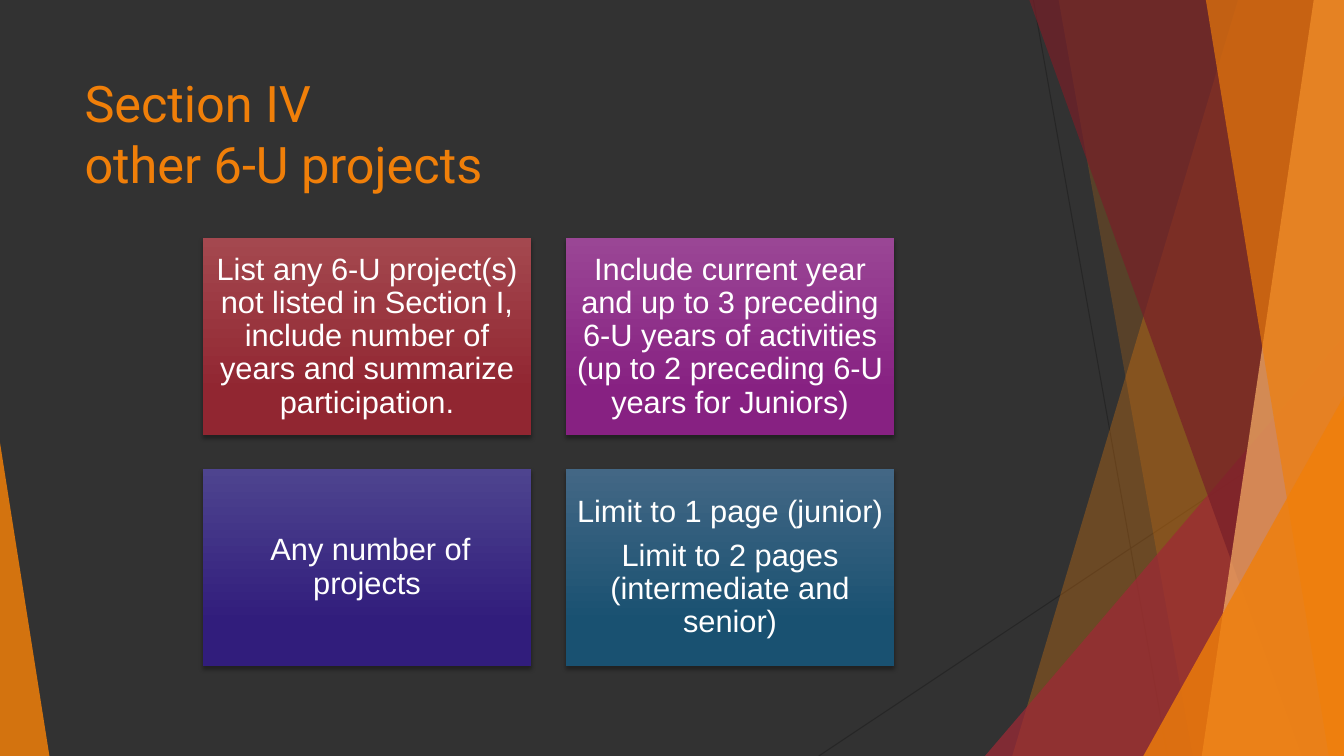
"""Build the Section IV slide: a title, four requirement cards and angled shards."""
from dataclasses import dataclass

from lxml import etree
from pptx import Presentation
from pptx.dml.color import RGBColor
from pptx.enum.shapes import MSO_CONNECTOR, MSO_SHAPE
from pptx.enum.text import MSO_ANCHOR, PP_ALIGN
from pptx.oxml.ns import qn
from pptx.shapes.autoshape import Shape
from pptx.slide import Slide
from pptx.util import Inches, Pt

STRAIGHT = MSO_CONNECTOR.STRAIGHT
TRIANGLE, RECTANGLE = MSO_SHAPE.ISOSCELES_TRIANGLE, MSO_SHAPE.RECTANGLE
TOP, MIDDLE, CENTER = MSO_ANCHOR.TOP, MSO_ANCHOR.MIDDLE, PP_ALIGN.CENTER

CHARCOAL = RGBColor(0x32, 0x32, 0x32)
SOOT = RGBColor(0x26, 0x26, 0x26)
ORANGE = RGBColor(0xF0, 0x7F, 0x09)
PEACH = RGBColor(0xF9, 0xB2, 0x68)
RED = RGBColor(0x9F, 0x29, 0x36)
MAROON = RGBColor(0x77, 0x1F, 0x28)
WHITE = RGBColor(0xFF, 0xFF, 0xFF)
CARD_RED = RGBColor(0xA4, 0x48, 0x4F), RGBColor(0x91, 0x26, 0x31)
CARD_PURPLE = RGBColor(0x9A, 0x46, 0x95), RGBColor(0x87, 0x21, 0x82)
CARD_INDIGO = RGBColor(0x4E, 0x44, 0x8F), RGBColor(0x31, 0x1D, 0x7C)
CARD_BLUE = RGBColor(0x43, 0x67, 0x85), RGBColor(0x19, 0x51, 0x71)

SLIDE_WIDTH, SLIDE_HEIGHT = Inches(13.33), Inches(7.5)
TITLE_BOX = 5.55, 8.93, 70.52, 19.2
CARD_LEFT, CARD_TOP = 15.08, 31.47
CARD_WIDTH, CARD_HEIGHT = 24.46, 26.13
COLUMN_STEP, ROW_STEP = 27.01, 30.53
CARD_INSET = Inches(0.09)


@dataclass(frozen=True)
class Ray:
    """A thin line between two points in percent of the slide."""
    start: tuple[float, float]
    end: tuple[float, float]


@dataclass(frozen=True)
class Shard:
    """A full-height panel from a slanted left edge to the slide's right edge."""
    top_x: float
    bottom_x: float
    color: RGBColor
    opacity: int


@dataclass(frozen=True)
class Wedge:
    """A right triangle standing on the slide's bottom edge."""
    left: float
    width: float
    height: float
    apex: float
    color: RGBColor
    opacity: int


@dataclass(frozen=True)
class Card:
    """A requirement placed by column and row, with its gradient colours."""
    column: int
    row: int
    gradient: tuple[RGBColor, RGBColor]
    lines: tuple[str, ...]


RAYS = (
    Ray((76.89, 0), (86.87, 100)),
    Ray((100, 53.73), (60.92, 100)),
)
BACKDROP = (
    Shard(92.12, 75.32, ORANGE, 30),
    Shard(78.77, 88.75, ORANGE, 20),
    Wedge(73.29, 26.71, 55.6, 1, RED, 72),
    Shard(76.59, 96.85, MAROON, 70),
    Shard(97.75, 89.42, PEACH, 70),
    Shard(89.72, 98.87, ORANGE, 65),
    Wedge(85.07, 14.93, 47.6, 1, ORANGE, 80),
    Wedge(0, 3.68, 41.47, 0, ORANGE, 85),
)
CARDS = (
    Card(0, 0, CARD_RED, ("List any 6-U project(s) not listed in Section I, include "
                          "number of years and summarize participation.",)),
    Card(1, 0, CARD_PURPLE, ("Include current year and up to 3 preceding 6-U years of "
                             "activities (up to 2 preceding 6-U years for Juniors)",)),
    Card(0, 1, CARD_INDIGO, (" Any number of projects",)),
    Card(1, 1, CARD_BLUE, ("Limit to 1 page (junior)",
                           "Limit to 2 pages (intermediate and senior)")),
)


def across(percent: float) -> int:
    """Turn a percentage of the slide's width into a length."""
    return round(SLIDE_WIDTH * percent / 100)


def down(percent: float) -> int:
    """Turn a percentage of the slide's height into a length."""
    return round(SLIDE_HEIGHT * percent / 100)


def draw_ray(slide: Slide, ray: Ray) -> None:
    """Draw one thin background line."""
    (x1, y1), (x2, y2) = ray.start, ray.end
    line = slide.shapes.add_connector(STRAIGHT, across(x1), down(y1), across(x2), down(y2))
    line.line.color.rgb = SOOT
    line.line.width = Pt(0.75)
    etree.SubElement(line._element.spPr, qn("a:effectLst"))


def tint(shape: Shape, color: RGBColor, opacity: int) -> None:
    """Give a shape a translucent fill without outline or shadow."""
    shape.shadow.inherit = False
    shape.line.fill.background()
    shape.fill.solid()
    shape.fill.fore_color.rgb = color
    tone = shape._element.spPr.find(qn("a:solidFill"))[0]
    etree.SubElement(tone, qn("a:alpha"), val=str(opacity * 1000))


def draw_shard(slide: Slide, shard: Shard) -> None:
    """Draw one slanted panel."""
    outline = slide.shapes.build_freeform(across(shard.top_x), 0)
    outline.add_line_segments([(across(100), 0), (across(100), down(100)),
                               (across(shard.bottom_x), down(100))])
    tint(outline.convert_to_shape(), shard.color, shard.opacity)


def draw_wedge(slide: Slide, wedge: Wedge) -> None:
    """Draw one triangle at the bottom edge."""
    triangle = slide.shapes.add_shape(
        TRIANGLE, across(wedge.left), down(100 - wedge.height),
        across(wedge.width), down(wedge.height))
    triangle.adjustments[0] = wedge.apex
    tint(triangle, wedge.color, wedge.opacity)


def draw_title(slide: Slide) -> None:
    """Write the two-line heading."""
    left, top, width, height = TITLE_BOX
    heading = slide.shapes.add_textbox(
        across(left), down(top), across(width), down(height)).text_frame
    heading.word_wrap = True
    heading.vertical_anchor = TOP
    heading.text = "Section IV\vother 6-U projects"
    font = heading.paragraphs[0].font
    font.name, font.size, font.color.rgb = "Roboto", Pt(36), ORANGE


def cast_shadow(shape: Shape) -> None:
    """Put a soft shadow below a shape."""
    shape.shadow.inherit = False
    effects = shape._element.spPr.find(qn("a:effectLst"))
    shadow = etree.SubElement(effects, qn("a:outerShdw"), blurRad=str(Pt(3)),
                              dist=str(Pt(2)), dir="5400000", rotWithShape="0")
    tone = etree.SubElement(shadow, qn("a:srgbClr"), val="000000")
    etree.SubElement(tone, qn("a:alpha"), val="35000")


def draw_card(slide: Slide, card: Card) -> None:
    """Draw one gradient card with its text."""
    panel = slide.shapes.add_shape(
        RECTANGLE, across(CARD_LEFT + card.column * COLUMN_STEP),
        down(CARD_TOP + card.row * ROW_STEP), across(CARD_WIDTH), down(CARD_HEIGHT))
    panel.line.fill.background()
    panel.fill.gradient()
    panel.fill.gradient_angle = 270
    for stop, color, position in zip(panel.fill.gradient_stops, card.gradient, (0, 0.78)):
        stop.color.rgb, stop.position = color, position
    cast_shadow(panel)
    frame = panel.text_frame
    frame.word_wrap = True
    frame.vertical_anchor = MIDDLE
    frame.margin_left = frame.margin_right = CARD_INSET
    frame.margin_top = frame.margin_bottom = CARD_INSET
    frame.text = "\n".join(card.lines)
    for paragraph in frame.paragraphs:
        paragraph.alignment = CENTER
        paragraph.line_spacing, paragraph.space_after = 0.9, Pt(7.7)
        font = paragraph.font
        font.name, font.size, font.color.rgb = "Arial", Pt(22), WHITE


def main() -> None:
    """Assemble the slide and save it."""
    deck = Presentation()
    deck.slide_width, deck.slide_height = SLIDE_WIDTH, SLIDE_HEIGHT
    slide = deck.slides.add_slide(deck.slide_layouts[6])
    slide.background.fill.solid()
    slide.background.fill.fore_color.rgb = CHARCOAL
    for ray in RAYS:
        draw_ray(slide, ray)
    for piece in BACKDROP:
        if isinstance(piece, Shard):
            draw_shard(slide, piece)
        else:
            draw_wedge(slide, piece)
    draw_title(slide)
    for card in CARDS:
        draw_card(slide, card)
    deck.save("out.pptx")


if __name__ == "__main__":
    main()
